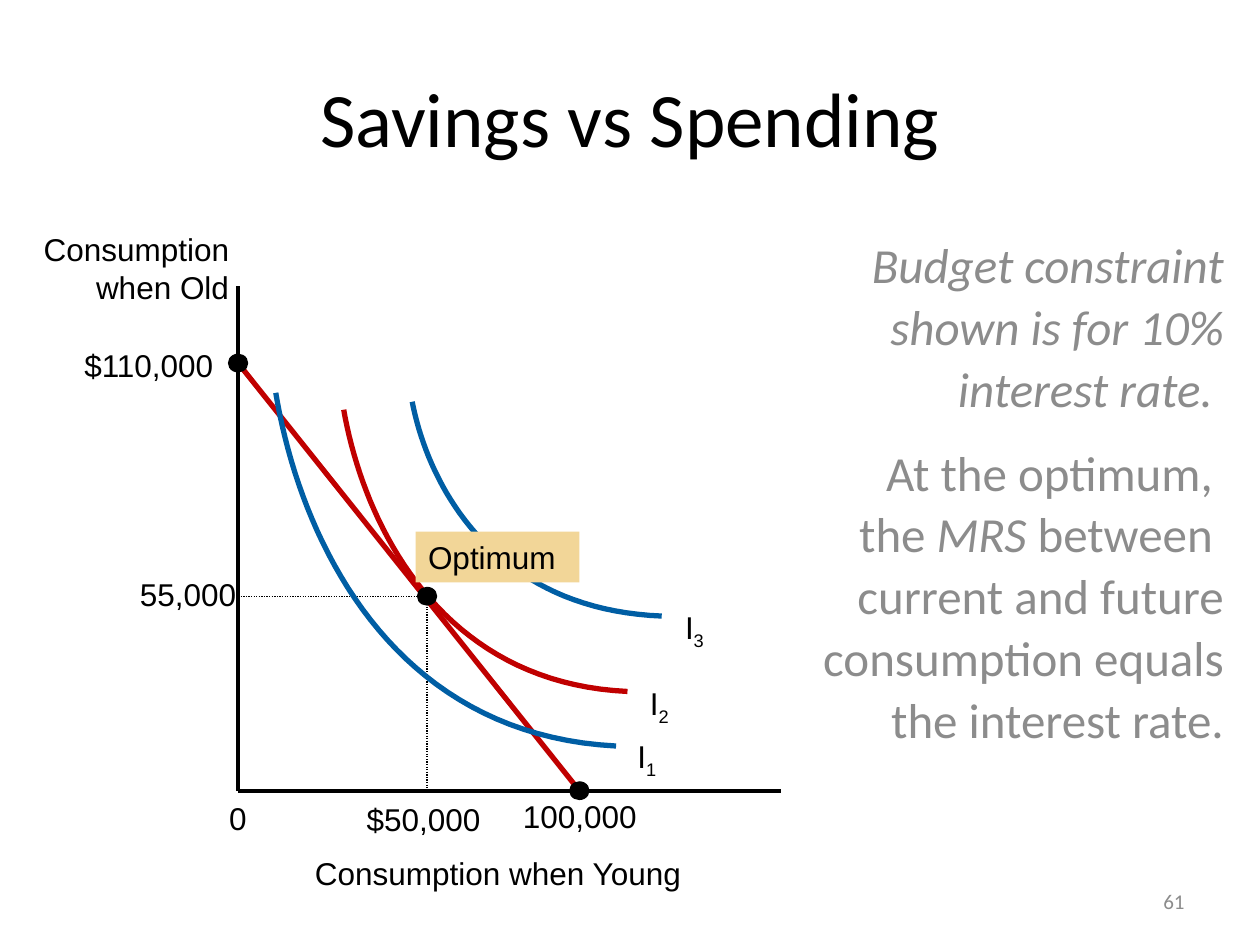
from typing import NamedTuple

from lxml.etree import SubElement
from pptx import Presentation
from pptx.dml.color import RGBColor
from pptx.enum.dml import MSO_LINE
from pptx.enum.shapes import MSO_CONNECTOR, MSO_SHAPE
from pptx.enum.text import MSO_ANCHOR, PP_ALIGN
from pptx.oxml.ns import qn
from pptx.util import Cm, Pt

BLACK = RGBColor(0x00, 0x00, 0x00)
GREY = RGBColor(0x8C, 0x8C, 0x8C)
RED = RGBColor(0xC0, 0x00, 0x00)
BLUE = RGBColor(0x00, 0x5E, 0xA4)
SAND = RGBColor(0xF2, 0xD6, 0x98)
LEFT, MID, RIGHT = PP_ALIGN.LEFT, PP_ALIGN.CENTER, PP_ALIGN.RIGHT
STEPS = 40
Point = tuple[float, float]


class Label(NamedTuple):
    text: str
    left: float
    top: float
    width: float
    height: float = 1.02
    align: PP_ALIGN = LEFT
    size: int = 18
    font: str = "Arial"
    color: RGBColor = BLACK
    wrap: bool = False
    anchor: MSO_ANCHOR = MSO_ANCHOR.TOP
    sub: str = ""
    fill: RGBColor | None = None


class Line(NamedTuple):
    start: Point
    end: Point
    width: float = 2.25
    color: RGBColor = BLACK
    dots: bool = False


class Curve(NamedTuple):
    knots: tuple[Point, Point, Point, Point]
    color: RGBColor


ORIGIN = (4.8, 15.95)
OLD = (4.8, 7.32)
YOUNG = (11.68, 15.94)
BEST = (8.61, 12.02)

LINES = [
    Line((ORIGIN[0], 5.77), ORIGIN),
    Line(ORIGIN, (15.75, ORIGIN[1])),
    Line(OLD, YOUNG, 3, RED),
    Line(BEST, (BEST[0], ORIGIN[1]), 0.75, dots=True),
    Line((ORIGIN[0], BEST[1]), BEST, 0.75, dots=True),
]
CURVES = [
    Curve(((6.93, 8.26), (7.34, 10.59), (8.89, 13.77), (12.65, 13.94)), RED),
    Curve(((5.56, 7.92), (6.05, 10.85), (7.87, 14.81), (12.42, 15.04)), BLUE),
    Curve(((8.31, 8.1), (8.66, 9.88), (10.01, 12.29), (13.34, 12.42)), BLUE),
]
LABELS = [
    Label("Savings vs Spending", 1.27, 0.76, 22.86, 3.18, MID, 44, "Calibri",
          wrap=True, anchor=MSO_ANCHOR.MIDDLE),
    Label("Consumption\nwhen Old", 0.58, 4.52, 4.29, 1.96, RIGHT),
    Label("Consumption when Young", 6.1, 17.09, 7.95),
    Label("0", 4.37, 15.98, 0.86),
    Label("I", 12.85, 13.67, 0.91, sub="2"),
    Label("I", 12.6, 14.73, 0.91, sub="1"),
    Label("I", 13.56, 12.14, 0.91, sub="3"),
    Label("$110,000", 1.45, 6.86, 3.35, wrap=True),
    Label("100,000", 10.29, 15.95, 2.82),
    Label("Optimum", 8.38, 10.72, 3.3, fill=SAND),
    Label("$50,000", 7.14, 16, 2.82),
    Label("55,000", 2.57, 11.46, 2.46),
    Label("61", 18.21, 17.65, 5.92, 1.02, RIGHT, 12, "Calibri", GREY, True,
          MSO_ANCHOR.MIDDLE),
]
NOTE = Label("Budget constraint shown is for 10% interest rate. \nAt the optimum, \vthe ",
             16.13, 4.55, 8.79, 12, RIGHT, 28, "Calibri", GREY, True)


def style(frame, item: Label) -> None:
    """Give every paragraph and run the look of the label."""
    for para in frame.paragraphs:
        para.alignment = item.align
        for run in para.runs:
            run.font.size = Pt(item.size)
            run.font.name = item.font
            run.font.color.rgb = item.color


def add_label(slide, item: Label):
    """Draw a text box and return its frame."""
    box = slide.shapes.add_textbox(*map(Cm, item[1:5]))
    if item.fill is not None:
        box.fill.solid()
        box.fill.fore_color.rgb = item.fill
    frame = box.text_frame
    frame.text = item.text
    frame.word_wrap = item.wrap
    frame.vertical_anchor = item.anchor
    if item.sub:
        run = frame.paragraphs[0].add_run()
        run.text = item.sub
        run._r.get_or_add_rPr().set("baseline", "-25000")
    style(frame, item)
    return frame


def add_note(slide, item: Label) -> None:
    """Draw the two paragraphs beside the graph."""
    frame = add_label(slide, item)
    first, last = frame.paragraphs
    term = last.add_run()
    term.text = "MRS"
    last.add_run().text = " between "
    last.add_line_break()
    last.add_run().text = "current and future consumption equals the interest rate."
    style(frame, item)
    for run in (*first.runs, term):
        run.font.italic = True
    for para in frame.paragraphs:
        para.line_spacing = 1.05
    last.space_before = Pt(12.6)


def add_line(slide, item: Line) -> None:
    """Draw a straight line."""
    ends = map(Cm, (*item.start, *item.end))
    line = slide.shapes.add_connector(MSO_CONNECTOR.STRAIGHT, *ends)
    line.line.width = Pt(item.width)
    line.line.color.rgb = item.color
    if item.dots:
        line.line.dash_style = MSO_LINE.ROUND_DOT
    SubElement(line._element.spPr, qn("a:effectLst"))


def bezier(knots: tuple[Point, ...], part: float) -> Point:
    """Return the point of a cubic curve at the given part of its run."""
    rest = 1 - part
    rates = (rest**3, 3 * rest**2 * part, 3 * rest * part**2, part**3)
    x, y = (sum(r * v for r, v in zip(rates, axis)) for axis in zip(*knots))
    return Cm(x), Cm(y)


def add_curve(slide, item: Curve) -> None:
    """Draw an indifference curve."""
    start, *rest = [bezier(item.knots, i / STEPS) for i in range(STEPS + 1)]
    pen = slide.shapes.build_freeform(*start)
    pen.add_line_segments(rest, close=False)
    curve = pen.convert_to_shape()
    curve.shadow.inherit = False
    curve.fill.background()
    curve.line.width = Pt(3)
    curve.line.color.rgb = item.color


def add_dot(slide, spot: Point) -> None:
    """Draw a round mark centred on a point."""
    wide, high = 0.41, 0.38
    place = (spot[0] - wide / 2, spot[1] - high / 2, wide, high)
    dot = slide.shapes.add_shape(MSO_SHAPE.OVAL, *map(Cm, place))
    dot.shadow.inherit = False
    dot.fill.solid()
    dot.fill.fore_color.rgb = BLACK
    dot.line.fill.background()


def main() -> None:
    """Build the slide and save it."""
    deck = Presentation()
    deck.slide_width, deck.slide_height = Cm(25.4), Cm(19.05)
    slide = deck.slides.add_slide(deck.slide_layouts[6])
    for line in LINES:
        add_line(slide, line)
    for curve in CURVES:
        add_curve(slide, curve)
    for spot in (OLD, YOUNG, BEST):
        add_dot(slide, spot)
    for item in LABELS:
        add_label(slide, item)
    add_note(slide, NOTE)
    deck.save("out.pptx")


if __name__ == "__main__":
    main()
